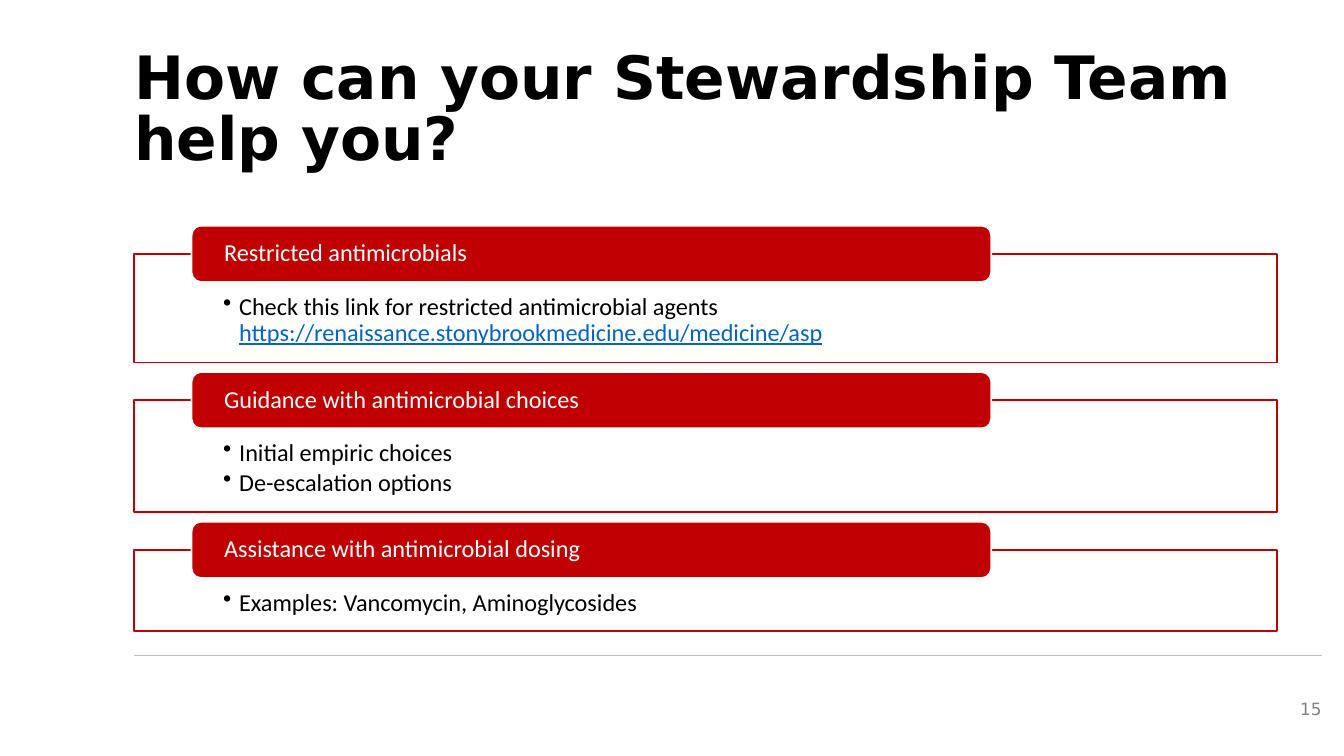
from dataclasses import dataclass

from lxml.etree import SubElement
from pptx import Presentation
from pptx.dml.color import RGBColor
from pptx.enum.shapes import MSO_CONNECTOR as Connector, MSO_SHAPE as Preset
from pptx.enum.text import MSO_ANCHOR as Anchor, MSO_AUTO_SIZE as AutoSize, PP_ALIGN as Align
from pptx.oxml.ns import qn
from pptx.util import Pt


@dataclass(frozen=True)
class Theme:
    heading_font: str = "DejaVu Sans"
    body_font: str = "Calibri"
    title_size: float = 32
    text_size: float = 13
    number_size: float = 9
    ink: str = "000000"
    paper: str = "FFFFFF"
    accent: str = "C00000"
    link: str = "0563C1"
    rule: str = "C0C0C0"
    number: str = "828383"


THEME = Theme()
LINK = "https://renaissance.stonybrookmedicine.edu/medicine/asp"

# Each section: heading, frame height, bullets made of (text, is_link) spans
SECTIONS = [
    ("Restricted antimicrobials", 58.2,
     [[("Check this link for restricted antimicrobial agents ", False), (LINK, True)]]),
    ("Guidance with antimicrobial choices", 60,
     [[("Initial empiric choices", False)], [("De-escalation options", False)]]),
    ("Assistance with antimicrobial dosing", 43.4,
     [[("Examples: Vancomycin, Aminoglycosides", False)]]),
]
TAB_HEIGHT = 30.2
SECTION_GAP = 5.1


def add_span(para, text, size, color, font=THEME.body_font, bold=False, underline=False):
    span = para.add_run()
    span.text = text
    span.font.name = font
    span.font.size = Pt(size)
    span.font.color.rgb = RGBColor.from_string(color)
    span.font.bold = bold
    span.font.underline = underline


def set_frame(frame, anchor, left=0, top=0, right=0, bottom=0):
    frame.word_wrap = True
    frame.auto_size = AutoSize.NONE
    frame.vertical_anchor = anchor
    frame.margin_left, frame.margin_top = Pt(left), Pt(top)
    frame.margin_right, frame.margin_bottom = Pt(right), Pt(bottom)


def add_panel(page, preset, box, fill, line):
    panel = page.shapes.add_shape(preset, *map(Pt, box))
    panel.shadow.inherit = False
    panel.fill.solid()
    panel.fill.fore_color.rgb = RGBColor.from_string(fill)
    panel.line.color.rgb = RGBColor.from_string(line)
    panel.line.width = Pt(1)
    return panel


def add_bullet(para):
    props = para._p.get_or_add_pPr()
    props.set("marL", str(Pt(8.64)))
    props.set("indent", str(-Pt(8.64)))
    SubElement(props, qn("a:buChar"), char="•")


def place_title(page, box, text):
    title = page.shapes.title
    title.left, title.top, title.width, title.height = map(Pt, box)
    set_frame(title.text_frame, Anchor.TOP)
    para = title.text_frame.paragraphs[0]
    para.alignment = Align.LEFT
    para.line_spacing = Pt(33)
    para.space_before = Pt(0)
    add_span(para, text, THEME.title_size, THEME.ink, THEME.heading_font, bold=True)


def place_section(page, box, heading, bullets):
    """Draw an outlined frame whose top edge runs through the middle of its tab."""
    left, top, width, height = box
    half_tab = TAB_HEIGHT / 2
    panel = add_panel(page, Preset.RECTANGLE,
                      (left, top + half_tab, width, height - half_tab),
                      THEME.paper, THEME.accent)
    color = panel.fill._xPr.find(qn("a:solidFill"))[0]
    SubElement(color, qn("a:alpha"), val="90000")
    frame = panel.text_frame
    set_frame(frame, Anchor.TOP, 47.5, 21.6, 47.5, 7.2)
    for index, spans in enumerate(bullets):
        para = frame.add_paragraph() if index else frame.paragraphs[0]
        add_bullet(para)
        para.alignment = Align.LEFT
        para.line_spacing = 0.9
        para.space_after = Pt(2)
        for text, is_link in spans:
            add_span(para, text, THEME.text_size,
                     THEME.link if is_link else THEME.ink, underline=is_link)

    tab = add_panel(page, Preset.ROUNDED_RECTANGLE,
                    (left + width * 0.05, top, width * 0.7, TAB_HEIGHT),
                    THEME.accent, THEME.paper)
    set_frame(tab.text_frame, Anchor.MIDDLE, left=16, right=16)
    para = tab.text_frame.paragraphs[0]
    para.alignment = Align.LEFT
    para.line_spacing = 0.9
    add_span(para, heading, THEME.text_size, THEME.paper)


def place_sections(page, left, top, width):
    for heading, frame_height, bullets in SECTIONS:
        height = TAB_HEIGHT / 2 + frame_height
        place_section(page, (left, top, width, height), heading, bullets)
        top += height + SECTION_GAP


def place_footer(page, box, number):
    left, top, width, height = box
    right = left + width
    rule = page.shapes.add_connector(Connector.STRAIGHT, Pt(left), Pt(top), Pt(right), Pt(top))
    rule.line.color.rgb = RGBColor.from_string(THEME.rule)
    rule.line.width = Pt(1)
    SubElement(rule._element.spPr, qn("a:effectLst"))

    label = page.shapes.add_textbox(Pt(right - 18), Pt(top + height - 21.6), Pt(18), Pt(21.6))
    set_frame(label.text_frame, Anchor.MIDDLE)
    para = label.text_frame.paragraphs[0]
    para.alignment = Align.RIGHT
    add_span(para, number, THEME.number_size, THEME.number, THEME.heading_font)


def main():
    deck = Presentation()
    deck.slide_width, deck.slide_height = Pt(720), Pt(405)
    page = deck.slides.add_slide(deck.slide_layouts.get_by_name("Title Only"))
    place_footer(page, (72, 351.2, 636, 39.2), "15")
    place_title(page, (72, 26.6, 612, 80), "How can your Stewardship Team help you?")
    place_sections(page, 72, 120.9, 612)
    deck.save("out.pptx")


if __name__ == "__main__":
    main()
